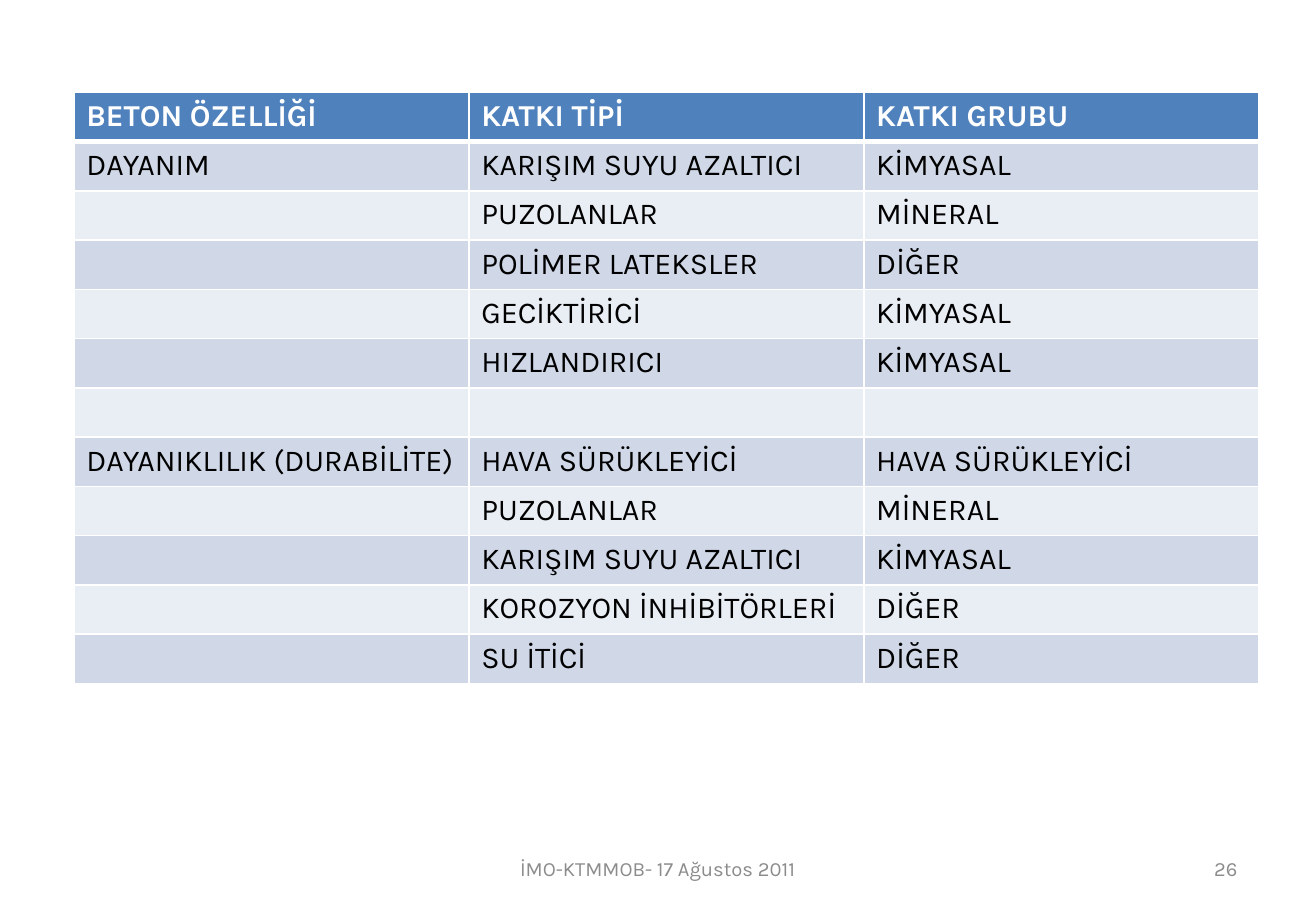
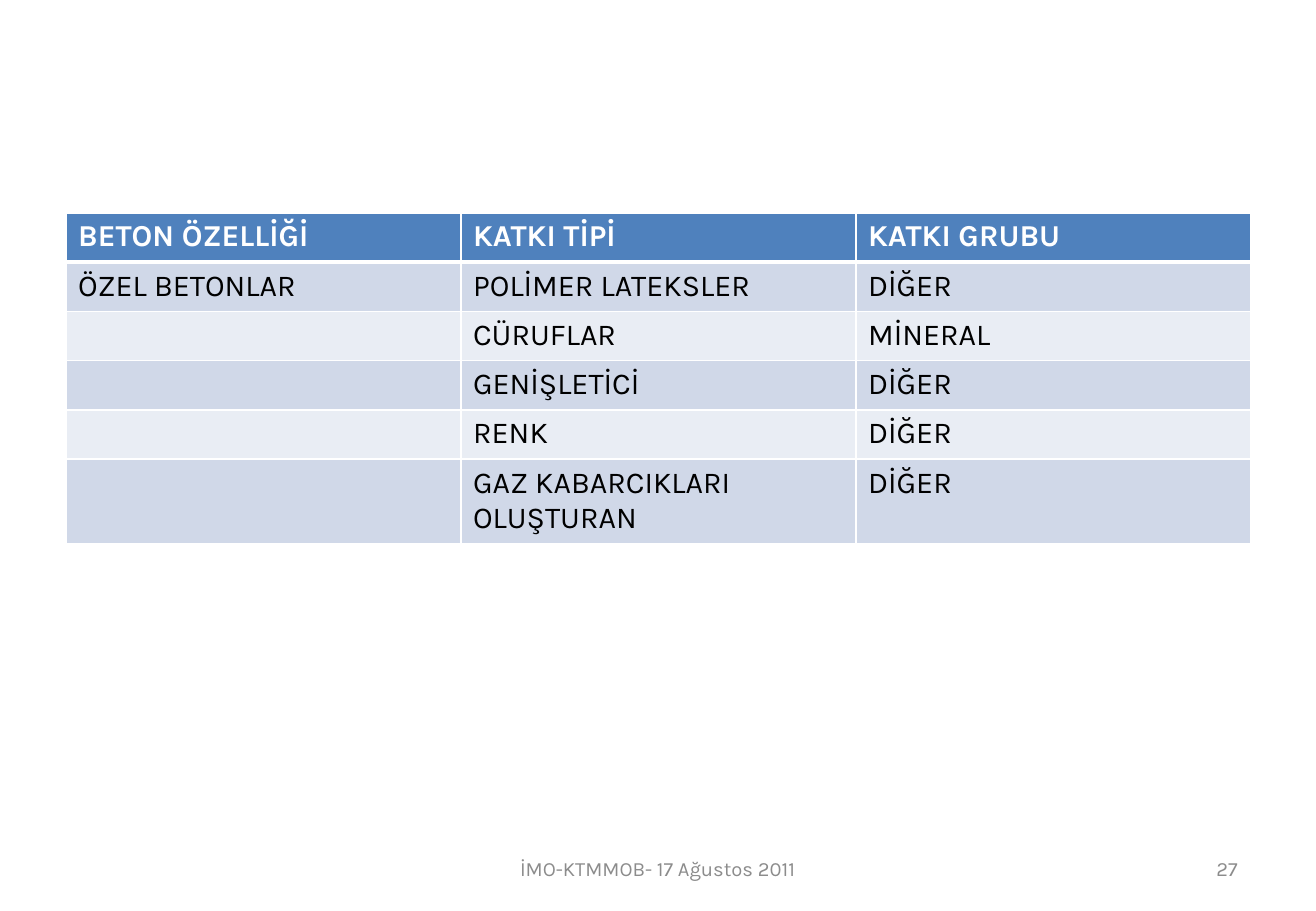
from dataclasses import dataclass

from lxml.etree import fromstring
from pptx import Presentation
from pptx.dml.color import RGBColor as RGB
from pptx.enum.text import MSO_ANCHOR as Anchor, PP_ALIGN as Align
from pptx.oxml.ns import nsdecls
from pptx.util import Cm, Pt


@dataclass(frozen=True)
class Theme:
    font: str = "Karla"
    head: str = "4F81BD"
    bands: tuple = ("D0D8E8", "E9EDF4")
    white: str = "FFFFFF"
    ink: str = "000000"
    gray: str = "8C8C8C"
    body: int = 18
    small: int = 12
    thin: int = 1
    thick: int = 3


T = Theme()


def put(frame, text, size=T.body, color=T.ink, bold=False, align=Align.LEFT):
    para = frame.paragraphs[0]
    para.alignment = align
    run = para.add_run()
    run.text = text
    font = run.font
    font.name, font.size, font.bold = T.font, Pt(size), bold
    font.color.rgb = RGB.from_string(color)


def edge(cell, sides):
    """Draw white cell borders; sides maps L, R, T, B to points."""
    props = cell._tc.get_or_add_tcPr()
    for i, (side, width) in enumerate(sides.items()):
        props.insert(i, fromstring(
            f'<a:ln{side} {nsdecls("a")} w="{Pt(width)}"><a:solidFill>'
            f'<a:srgbClr val="{T.white}"/></a:solidFill></a:ln{side}>'))


# Content: table position, then rows below the shared header
HEAD = ("BETON ÖZELLİĞİ", "KATKI TİPİ", "KATKI GRUBU")
PAGES = [
    (26, 1.55, 1.93, [
        ("DAYANIM", "KARIŞIM SUYU AZALTICI", "KİMYASAL"),
        ("", "PUZOLANLAR", "MİNERAL"),
        ("", "POLİMER LATEKSLER", "DİĞER"),
        ("", "GECİKTİRİCİ", "KİMYASAL"),
        ("", "HIZLANDIRICI", "KİMYASAL"),
        ("", "", ""),
        ("DAYANIKLILIK (DURABİLİTE)", "HAVA SÜRÜKLEYİCİ", "HAVA SÜRÜKLEYİCİ"),
        ("", "PUZOLANLAR", "MİNERAL"),
        ("", "KARIŞIM SUYU AZALTICI", "KİMYASAL"),
        ("", "KOROZYON İNHİBİTÖRLERİ", "DİĞER"),
        ("", "SU İTİCİ", "DİĞER"),
    ]),
    (27, 1.38, 4.45, [
        ("ÖZEL BETONLAR", "POLİMER LATEKSLER", "DİĞER"),
        ("", "CÜRUFLAR", "MİNERAL"),
        ("", "GENİŞLETİCİ", "DİĞER"),
        ("", "RENK", "DİĞER"),
        ("", "GAZ KABARCIKLARI OLUŞTURAN", "DİĞER"),
    ]),
]
COL, ROW = 8.26, 1.03

deck = Presentation()
deck.slide_width, deck.slide_height = Cm(27.52), Cm(19.05)

for page, left, top, body in PAGES:
    slide = deck.slides.add_slide(deck.slide_layouts[6])

    # Table
    rows = [HEAD] + body
    grid = slide.shapes.add_table(
        len(rows), len(HEAD), Cm(left), Cm(top),
        Cm(COL * len(HEAD)), Cm(ROW * len(rows))).table
    for r, row in enumerate(rows):
        first = r == 0
        sides = {"L": T.thin, "R": T.thin,
                 "T": T.thick if r == 1 else T.thin,
                 "B": T.thick if first else T.thin}
        for c, text in enumerate(row):
            cell = grid.cell(r, c)
            cell.fill.solid()
            cell.fill.fore_color.rgb = RGB.from_string(
                T.head if first else T.bands[(r - 1) % 2])
            edge(cell, sides)
            if text:
                put(cell.text_frame, text, bold=first,
                    color=T.white if first else T.ink)

    # Footer and page number
    for x, width, text, align in (
            (9.4, 8.71, "İMO-KTMMOB- 17 Ağustos 2011", Align.CENTER),
            (19.71, 6.42, str(page), Align.RIGHT)):
        frame = slide.shapes.add_textbox(
            Cm(x), Cm(17.66), Cm(width), Cm(1.01)).text_frame
        frame.word_wrap = True
        frame.vertical_anchor = Anchor.MIDDLE
        put(frame, text, size=T.small, color=T.gray, align=align)

deck.save("out.pptx")
